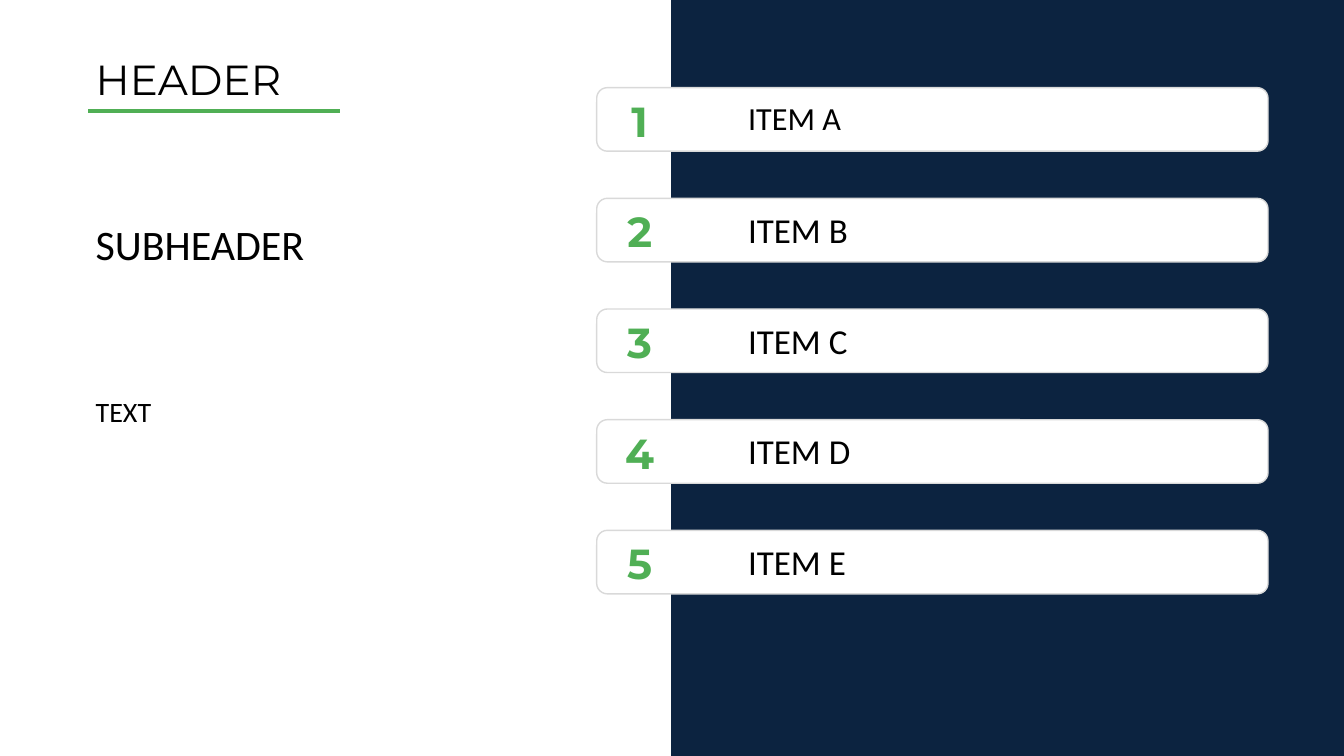
from dataclasses import dataclass

from lxml import etree
from pptx import Presentation
from pptx.dml.color import RGBColor
from pptx.enum.shapes import MSO_CONNECTOR, MSO_SHAPE
from pptx.enum.text import MSO_ANCHOR, MSO_AUTO_SIZE, PP_ALIGN
from pptx.oxml.ns import qn
from pptx.util import Inches, Pt

RECTANGLE = MSO_SHAPE.RECTANGLE
CARD = MSO_SHAPE.FLOWCHART_ALTERNATE_PROCESS
STRAIGHT = MSO_CONNECTOR.STRAIGHT
BOTTOM = MSO_ANCHOR.BOTTOM
GROW = MSO_AUTO_SIZE.SHAPE_TO_FIT_TEXT
CENTER = PP_ALIGN.CENTER

SLIDE_WIDTH, SLIDE_HEIGHT = Inches(13.33), Inches(7.5)


@dataclass(frozen=True)
class Theme:
    navy: RGBColor = RGBColor.from_string("0C2340")
    green: RGBColor = RGBColor.from_string("50AF55")
    white: RGBColor = RGBColor.from_string("FFFFFF")
    black: RGBColor = RGBColor.from_string("000000")
    border: RGBColor = RGBColor.from_string("D9D9D9")
    heading_font: str = "Montserrat"
    body_font: str = "Calibri"
    large: int = 30
    item: int = 25
    first_item: int = 23
    small: int = 20


THEME = Theme()

# Positions and sizes are percentages of the slide's width and height.
TEXT_LEFT, TEXT_WIDTH = 6.38, 27.08
CARD_LEFT, CARD_TOP, CARD_WIDTH, CARD_HEIGHT = 44.4, 11.6, 49.95, 8.4
CARD_PITCH = 14.64
LABEL_LEFT, LABEL_WIDTH = 54.92, 9.2

ITEMS = [
    ("ITEM A", THEME.first_item),
    ("ITEM B", THEME.item),
    ("ITEM C", THEME.item),
    ("ITEM D", THEME.item),
    ("ITEM E", THEME.item),
]


def share(left, top, width, height):
    """Turn percentages of the slide into lengths."""
    return (
        int(SLIDE_WIDTH * left / 100),
        int(SLIDE_HEIGHT * top / 100),
        int(SLIDE_WIDTH * width / 100),
        int(SLIDE_HEIGHT * height / 100),
    )


def apply_format(target, values):
    for name, value in values.items():
        setattr(target, name, value)


def add_panel(shapes, kind, area, fill, line):
    panel = shapes.add_shape(kind, *share(*area))
    panel.shadow.inherit = False
    panel.fill.solid()
    panel.fill.fore_color.rgb = fill
    panel.line.color.rgb = line
    panel.line.width = Pt(1)


def add_text(shapes, text, area, font, size, color=THEME.black, bold=False,
             frame_format=None, para_format=None):
    frame = shapes.add_textbox(*share(*area)).text_frame
    apply_format(frame, {"word_wrap": True, **(frame_format or {})})
    para = frame.paragraphs[0]
    apply_format(para, para_format or {})
    span = para.add_run()
    span.text = text
    apply_format(span.font, {"name": font, "size": Pt(size), "bold": bold})
    span.font.color.rgb = color


def add_side_text(shapes, text, top, height, font, size, width=TEXT_WIDTH):
    add_text(shapes, text, (TEXT_LEFT, top, width, height), font, size,
             frame_format={"vertical_anchor": BOTTOM},
             para_format={"line_spacing": 0.9})


def add_underline(shapes, left, top, width):
    x, y, length, _ = share(left, top, width, 0)
    rule = shapes.add_connector(STRAIGHT, x, y, x + length, y)
    rule.line.color.rgb = THEME.green
    rule.line.width = Pt(3)
    etree.SubElement(rule._element.spPr, qn("a:effectLst"))


def add_item(page, index, label, size):
    shapes = page.shapes.add_group_shape().shapes
    top = CARD_TOP + index * CARD_PITCH
    add_panel(shapes, CARD, (CARD_LEFT, top, CARD_WIDTH, CARD_HEIGHT),
              THEME.white, THEME.border)
    add_text(shapes, label, (LABEL_LEFT, top + 0.7, LABEL_WIDTH, 6.93),
             THEME.body_font, size,
             frame_format={"word_wrap": False, "auto_size": GROW})
    add_text(shapes, str(index + 1), (45.38, top + 0.35, 4.43, 8.13),
             THEME.heading_font, THEME.large, THEME.green, True,
             frame_format={"auto_size": GROW},
             para_format={"alignment": CENTER})


def add_header(page):
    shapes = page.shapes.add_group_shape().shapes
    add_side_text(shapes, "HEADER", 8.67, 5.87, THEME.heading_font,
                  THEME.large, width=54.45)
    add_underline(shapes, 6.57, 14.67, 18.71)


def main():
    deck = Presentation()
    deck.slide_width, deck.slide_height = SLIDE_WIDTH, SLIDE_HEIGHT
    page = deck.slides.add_slide(deck.slide_layouts[6])
    page.background.fill.solid()
    page.background.fill.fore_color.rgb = THEME.white

    add_side_text(page.shapes, "SUBHEADER", 30.4, 5.87, THEME.body_font,
                  THEME.large)
    add_panel(page.shapes, RECTANGLE, (50, 0, 50, 100), THEME.navy, THEME.navy)
    add_side_text(page.shapes, "TEXT", 43.5, 13.9, THEME.body_font,
                  THEME.small)
    for index, item in enumerate(ITEMS):
        add_item(page, index, *item)
    add_header(page)
    deck.save("out.pptx")


if __name__ == "__main__":
    main()
